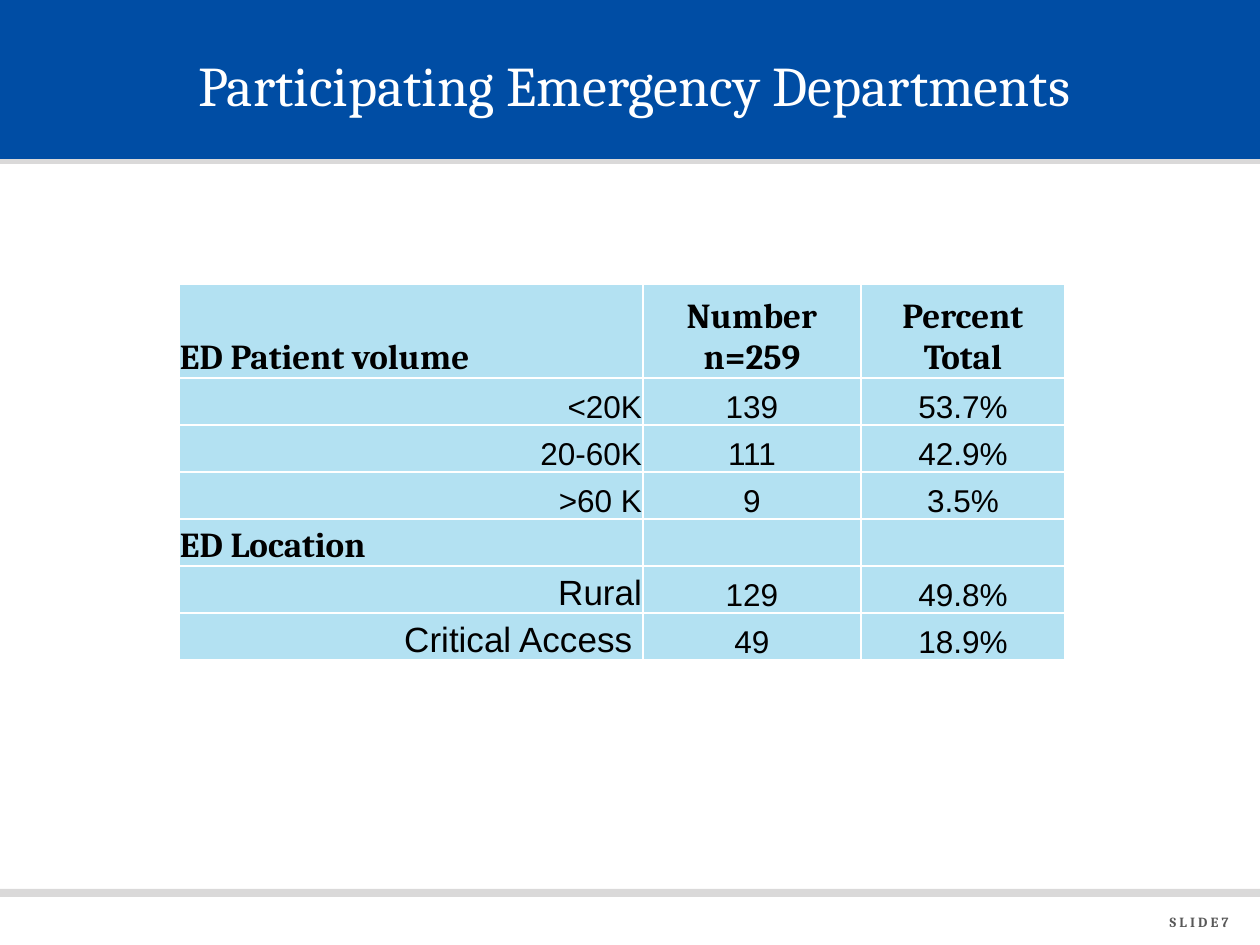
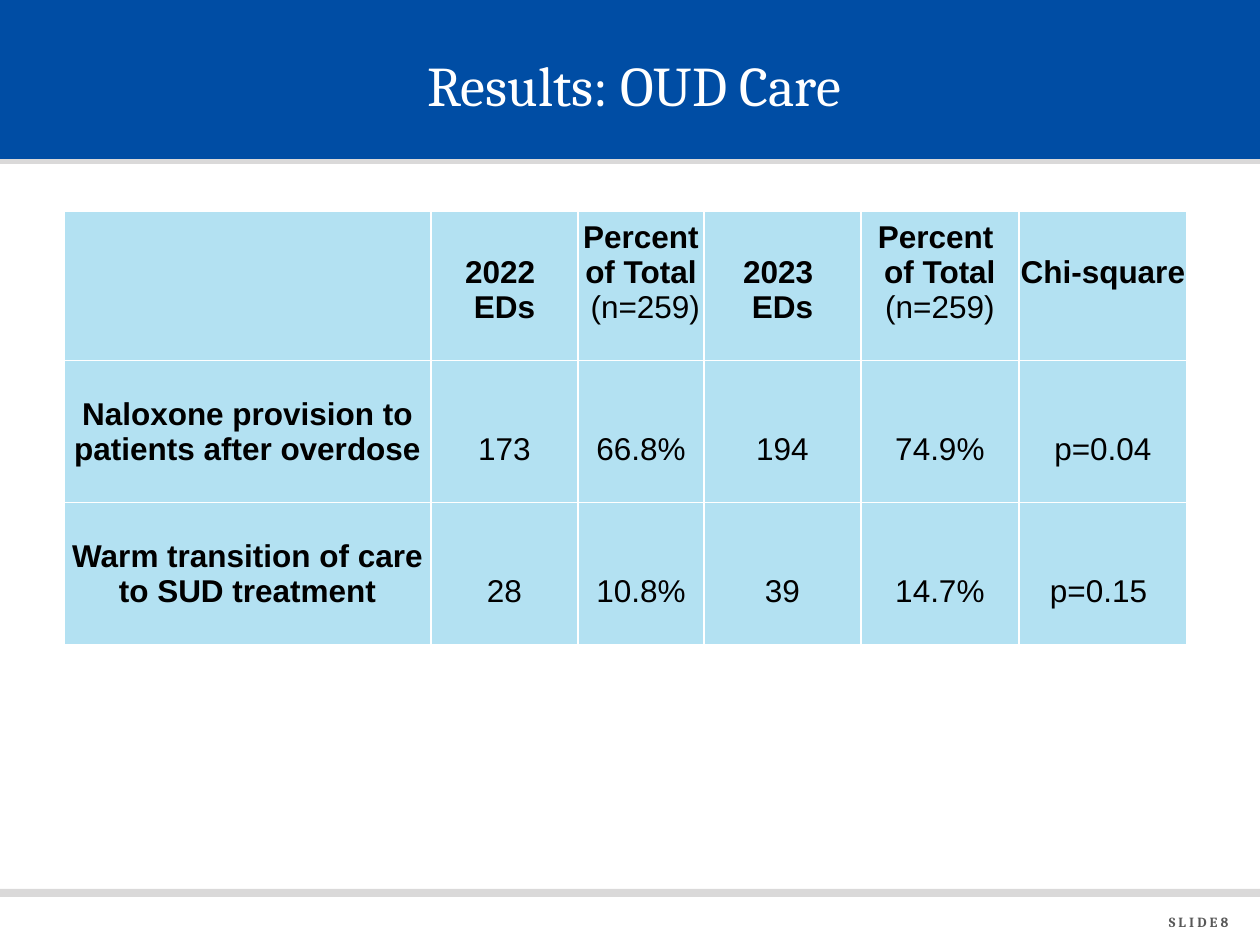
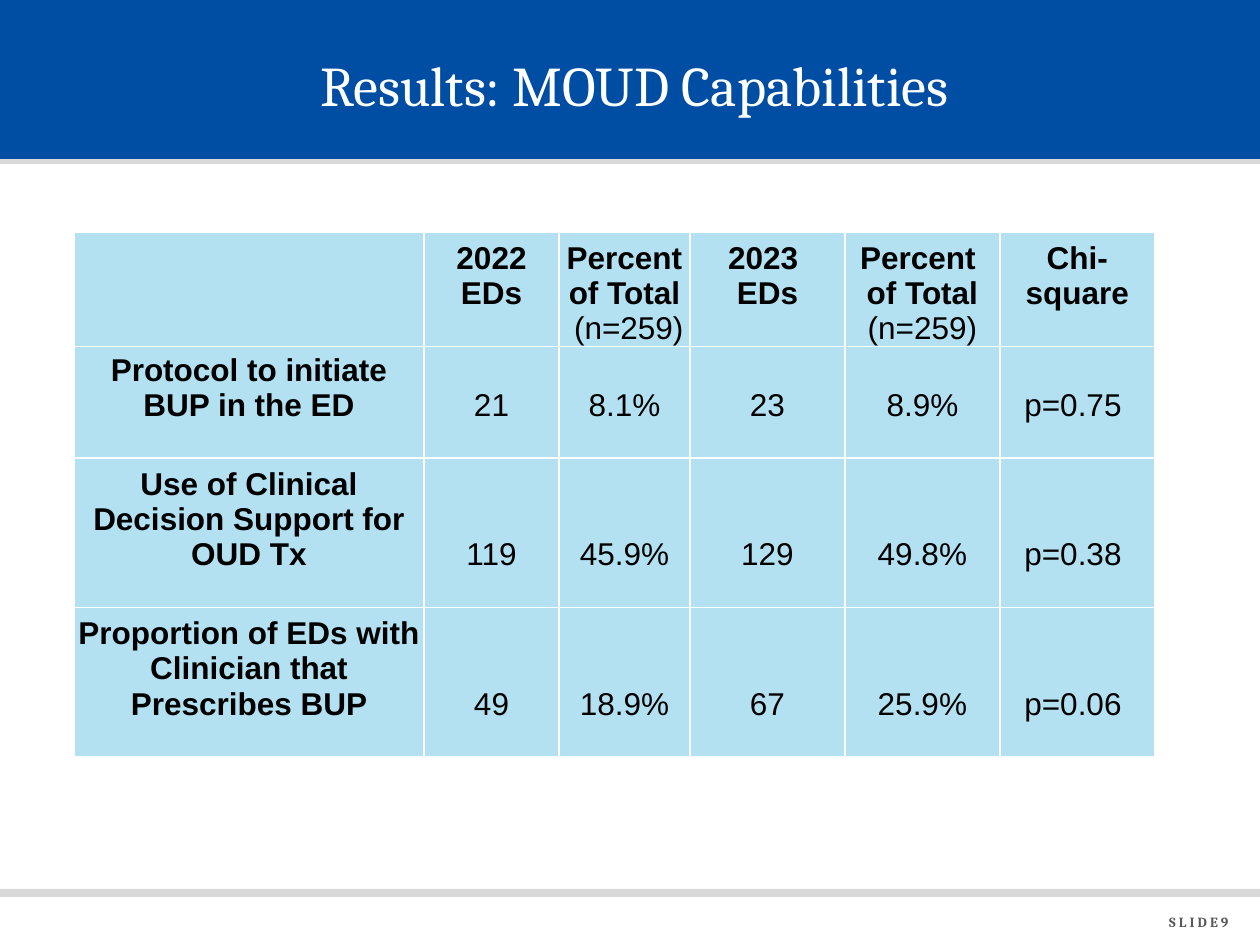
"""Builds three slides of emergency department survey tables."""
from dataclasses import dataclass

from lxml.etree import SubElement
from pptx import Presentation
from pptx.dml.color import RGBColor
from pptx.enum.shapes import MSO_SHAPE
from pptx.enum.text import MSO_ANCHOR, PP_ALIGN
from pptx.oxml.ns import qn
from pptx.util import Inches, Pt

EMU_PER_PX = Inches(1) / 126
SLIDE_WIDTH, SLIDE_HEIGHT = 1260, 945
LINE_HEIGHT = 35

WHITE = RGBColor(0xFF, 0xFF, 0xFF)
BLACK = RGBColor(0x00, 0x00, 0x00)
BAND_BLUE = RGBColor(0x00, 0x4D, 0xA4)
RULE_GRAY = RGBColor(0xDA, 0xD9, 0xD9)
FOOTER_GRAY = RGBColor(0x58, 0x58, 0x58)
CELL_BLUE = RGBColor(0xB3, 0xE1, 0xF2)

SERIF, SANS = "Cambria", "Arial"


@dataclass
class Cell:
    """Content of one table cell; lift counts the free lines below the text."""
    lines: tuple = ()
    size: int = 18
    font: str = SANS
    bold: bool = False
    align: PP_ALIGN = PP_ALIGN.CENTER
    lift: int = 0


def px(length):
    """Turn px into EMU."""
    return round(length * EMU_PER_PX)


def add_run(paragraph, text, size, font, color, bold=False):
    """Add one formatted run."""
    run = paragraph.add_run()
    run.text = text
    run.font.size = Pt(size)
    run.font.name = font
    run.font.bold = bold
    run.font.color.rgb = color


def add_band(slide, top, height, color):
    """Add a band across the whole slide."""
    shape = slide.shapes.add_shape(
        MSO_SHAPE.RECTANGLE, 0, px(top), px(SLIDE_WIDTH), px(height))
    shape.shadow.inherit = False
    shape.fill.solid()
    shape.fill.fore_color.rgb = color
    shape.line.fill.background()


def add_text(slide, box, text, size, color, align, anchor, bold=False):
    """Add a one-line text box in the serif font."""
    shape = slide.shapes.add_textbox(*map(px, box))
    frame = shape.text_frame
    frame.word_wrap = True
    frame.vertical_anchor = anchor
    paragraph = frame.paragraphs[0]
    paragraph.alignment = align
    add_run(paragraph, text, size, SERIF, color, bold)


def add_framed_slide(presentation, title, number):
    """Add a slide with the title band, rules and footer."""
    slide = presentation.slides.add_slide(presentation.slide_layouts[6])
    add_band(slide, 132, 32, RULE_GRAY)
    add_band(slide, -1, 160, BAND_BLUE)
    add_text(slide, (1062, 907, 179, 29), f"S L I D E {number}", 8,
             FOOTER_GRAY, PP_ALIGN.RIGHT, MSO_ANCHOR.TOP, bold=True)
    add_band(slide, 889, 8, RULE_GRAY)
    add_text(slide, (74, 21, 1121, 126), title, 32, WHITE,
             PP_ALIGN.CENTER, MSO_ANCHOR.MIDDLE)
    return slide


def add_borders(table_cell):
    """Draw white 1 pt borders on all sides of a cell."""
    properties = table_cell._tc.get_or_add_tcPr()
    for side in ("lnL", "lnR", "lnT", "lnB"):
        line = SubElement(properties, qn(f"a:{side}"), w=str(Pt(1)))
        fill = SubElement(line, qn("a:solidFill"))
        SubElement(fill, qn("a:srgbClr"), val=str(WHITE))


def fill_cell(table_cell, cell):
    """Format a table cell and write its lines."""
    add_borders(table_cell)
    table_cell.fill.solid()
    table_cell.fill.fore_color.rgb = CELL_BLUE
    table_cell.vertical_anchor = MSO_ANCHOR.BOTTOM
    table_cell.margin_left = table_cell.margin_right = px(1)
    table_cell.margin_top = px(1)
    table_cell.margin_bottom = px(cell.lift * LINE_HEIGHT)
    frame = table_cell.text_frame
    for index, (text, bold) in enumerate(cell.lines):
        paragraph = frame.add_paragraph() if index else frame.paragraphs[0]
        paragraph.alignment = cell.align
        add_run(paragraph, text, cell.size, cell.font, BLACK, bold)


def add_cell_table(slide, left, top, widths, heights, rows):
    """Add a table from rows of Cell values."""
    table = slide.shapes.add_table(
        len(heights), len(widths), px(left), px(top),
        px(sum(widths)), px(sum(heights))).table
    table.first_row = table.horz_banding = False
    for column, width in zip(table.columns, widths):
        column.width = px(width)
    for table_row, height, cells in zip(table.rows, heights, rows):
        table_row.height = px(height)
        for table_cell, cell in zip(table_row.cells, cells):
            fill_cell(table_cell, cell)


def heading(text, align=PP_ALIGN.CENTER):
    """Return a bold serif heading cell."""
    return Cell(((text, True),), 20, SERIF, align=align)


def department_row(label, number, percent, size=18):
    """Return a row with a right-aligned label and two values."""
    return [Cell(((label, False),), size, align=PP_ALIGN.RIGHT),
            *(Cell(((value, False),)) for value in (number, percent))]


def bold_cell(*texts, lift):
    """Return a cell of bold lines."""
    return Cell(tuple((text, True) for text in texts), lift=lift)


def result_header(first_year, lift, year_lift, chi_lift):
    """Return the header row of a results table."""
    def percent(first_lines, count):
        return Cell((*((text, True) for text in first_lines), (count, False)),
                    lift=lift)
    return [Cell(),
            bold_cell(*first_year, lift=year_lift),
            percent(("Percent of Total",), " (n=259)"),
            bold_cell("2023 ", "EDs", lift=year_lift),
            percent(("Percent ", "of Total"), "(n=259)"),
            bold_cell("Chi-square", lift=chi_lift)]


def result_row(label, *values):
    """Return a results row with one free line below the text."""
    return [bold_cell(label, lift=1),
            *(Cell(((value, False),), lift=1) for value in values)]


def main():
    """Build and save the slides."""
    presentation = Presentation()
    presentation.slide_width = px(SLIDE_WIDTH)
    presentation.slide_height = px(SLIDE_HEIGHT)

    slide = add_framed_slide(
        presentation, "Participating Emergency Departments", 7)
    add_cell_table(slide, 179, 284, (464, 218, 204), (94, *[47] * 6), [
        [heading("ED Patient volume", PP_ALIGN.LEFT),
         heading("Number n=259"), heading("Percent Total")],
        department_row("<20K", "139", "53.7%"),
        department_row("20-60K", "111", "42.9%"),
        department_row(">60 K", "9", "3.5%"),
        [heading("ED Location", PP_ALIGN.LEFT), Cell(), Cell()],
        department_row("Rural", "129", "49.8%", 20),
        department_row("Critical Access ", "49", "18.9%", 20),
    ])

    slide = add_framed_slide(presentation, "Results: OUD Care", 8)
    add_cell_table(
        slide, 64, 211, (367, 147, 126, 157, 158, 168), [142] * 3, [
            result_header(("2022 ", "EDs"), 1, 1, 2),
            result_row("Naloxone provision to patients after overdose",
                       "173", "66.8%", "194", "74.9%", "p=0.04"),
            result_row("Warm transition of care to SUD treatment",
                       "28", "10.8%", "39", "14.7%", "p=0.15 "),
        ])

    slide = add_framed_slide(presentation, "Results: MOUD Capabilities", 9)
    add_cell_table(
        slide, 74, 232, (350, 135, 131, 155, 155, 155),
        (106, 107, 142, 142), [
            result_header(("2022 EDs",), 0, 1, 1),
            result_row("Protocol to initiate BUP in the ED",
                       "21", "8.1%", "23", "8.9%", "p=0.75 "),
            result_row("Use of Clinical Decision Support for OUD Tx",
                       "119", "45.9%", "129", "49.8%", "p=0.38 "),
            result_row("Proportion of EDs with Clinician that Prescribes BUP",
                       "49", "18.9%", "67", "25.9%", "p=0.06 "),
        ])

    presentation.save("out.pptx")


if __name__ == "__main__":
    main()
